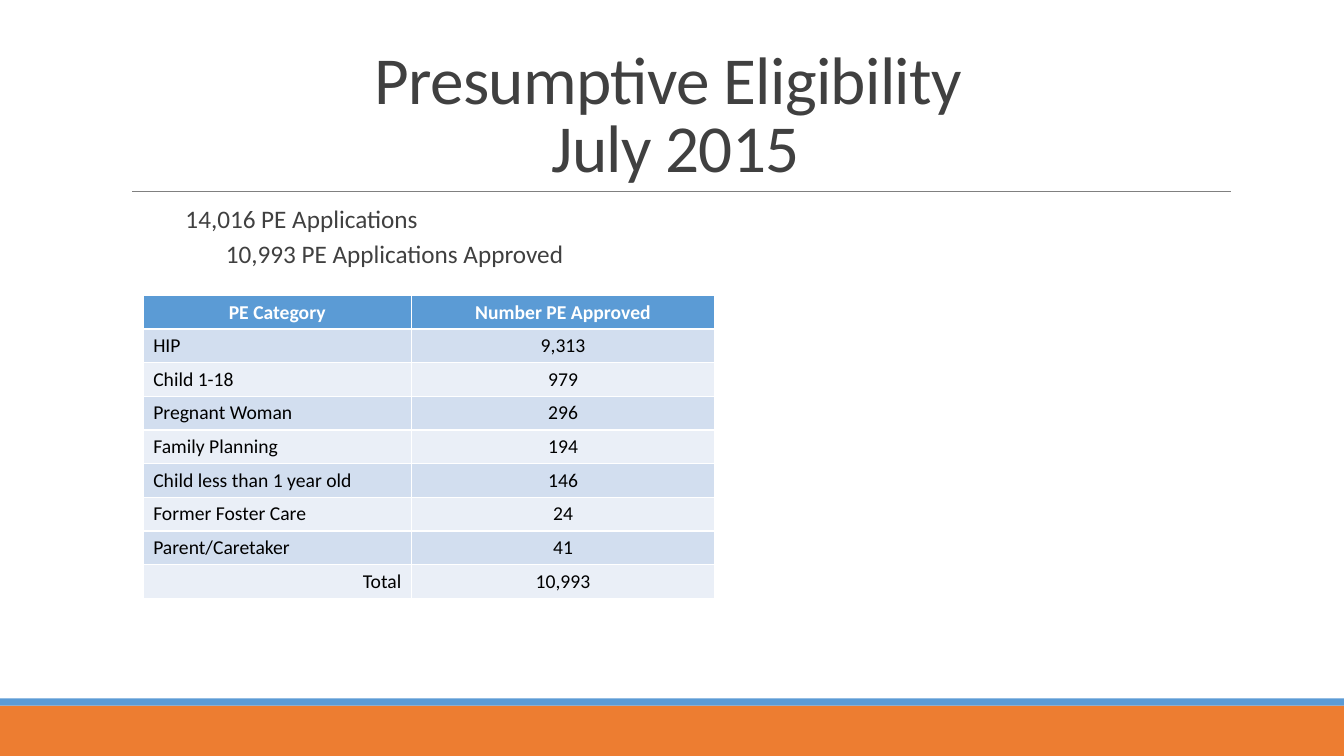
from dataclasses import dataclass

from lxml import etree
from pptx import Presentation
from pptx import util as u
from pptx.dml.color import RGBColor
from pptx.enum import shapes, text
from pptx.oxml import ns

COLORS = {
    "orange": "ED7D31",
    "blue": "5B9BD5",
    "rule": "808080",
    "body": "404040",
    "white": "FFFFFF",
    "black": "000000",
    "band_dark": "D2DEEF",
    "band_light": "EAEFF7",
}
FONT = "Calibri"
SLIDE_WIDTH, SLIDE_HEIGHT = 13.33, 7.5
ALIGN = text.PP_ALIGN


@dataclass
class Bar:
    top: float
    height: float
    color: str


@dataclass
class Statement:
    wording: str
    indent: float


@dataclass
class Category:
    name: str
    approved: str
    align: ALIGN = ALIGN.LEFT


BARS = [Bar(7, 0.5, "orange"), Bar(6.93, 0.07, "blue")]
TITLE_LINES = ["Presumptive Eligibility ", "July 2015"]
STATEMENTS = [
    Statement("14,016 PE Applications", 0.42),
    Statement("10,993 PE Applications Approved", 0.82),
]
CATEGORIES = [
    Category("PE Category", "Number PE Approved", ALIGN.CENTER),
    Category("HIP", "9,313"),
    Category("Child 1-18", "979"),
    Category("Pregnant Woman", "296"),
    Category("Family Planning", "194"),
    Category("Child less than 1 year old", "146"),
    Category("Former Foster Care", "24"),
    Category("Parent/Caretaker", "41"),
    Category("Total", "10,993", ALIGN.RIGHT),
]
COLUMN_WIDTHS = [2.66, 3.01]
ROW_HEIGHT = 0.33


def rgb(name: str) -> RGBColor:
    return RGBColor.from_string(COLORS[name])


def style(para, size: float, color: str, bold: bool = False) -> None:
    font = para.font
    font.name, font.size, font.bold = FONT, u.Pt(size), bold
    font.color.rgb = rgb(color)


def place(box, left: float, top: float, width: float, height: float) -> None:
    box.left, box.top = u.Inches(left), u.Inches(top)
    box.width, box.height = u.Inches(width), u.Inches(height)


def draw_bar(page, bar: Bar) -> None:
    box = page.shapes.add_shape(
        shapes.MSO_SHAPE.RECTANGLE, 0, u.Inches(bar.top),
        u.Inches(SLIDE_WIDTH), u.Inches(bar.height))
    box.shadow.inherit = False
    box.fill.solid()
    box.fill.fore_color.rgb = rgb(bar.color)
    box.line.fill.background()


def draw_rule(page) -> None:
    rule = page.shapes.add_connector(
        shapes.MSO_CONNECTOR.STRAIGHT, u.Inches(1.31), u.Inches(1.9),
        u.Inches(12.21), u.Inches(1.9))
    rule.line.color.rgb = rgb("rule")
    rule.line.width = u.Pt(0.5)
    etree.SubElement(rule._element.spPr, ns.qn("a:effectLst"))


def draw_title(page) -> None:
    title = page.shapes.title
    place(title, 1.2, 0.31, 11, 1.59)
    frame = title.text_frame
    frame.auto_size = text.MSO_AUTO_SIZE.NONE
    frame.vertical_anchor = text.MSO_ANCHOR.BOTTOM
    para = frame.paragraphs[0]
    para.alignment = ALIGN.CENTER
    para.line_spacing = 0.85
    style(para, 48, "body")
    for index, line in enumerate(TITLE_LINES):
        if index:
            para.add_line_break()
        span = para.add_run()
        span.text = line
        span.font._element.set("spc", "-50")


def draw_statements(page, statements: list[Statement]) -> None:
    box = page.shapes.add_textbox(0, 0, 0, 0)
    place(box, 1.42, 2, 11, 0.85)
    frame = box.text_frame
    frame.word_wrap = True
    frame.margin_left = frame.margin_right = 0
    for index, statement in enumerate(statements):
        para = frame.add_paragraph() if index else frame.paragraphs[0]
        para.text = statement.wording
        para.line_spacing = 0.9
        para.space_before, para.space_after = u.Pt(2), u.Pt(4)
        para._p.get_or_add_pPr().set("marL", str(u.Inches(statement.indent)))
        style(para, 18, "body")


def draw_table(page, categories: list[Category]) -> None:
    table = page.shapes.add_table(
        len(categories), len(COLUMN_WIDTHS), u.Inches(1.42), u.Inches(2.93),
        u.Inches(sum(COLUMN_WIDTHS)),
        u.Inches(ROW_HEIGHT * len(categories))).table
    for column, width in zip(table.columns, COLUMN_WIDTHS):
        column.width = u.Inches(width)
    for index, category in enumerate(categories):
        header = index == 0
        band = "band_dark" if index % 2 else "band_light"
        table.rows[index].height = u.Inches(ROW_HEIGHT)
        entries = [(category.name, category.align),
                   (category.approved, ALIGN.CENTER)]
        for cell, (wording, align) in zip(table.rows[index].cells, entries):
            cell.fill.solid()
            cell.fill.fore_color.rgb = rgb("blue" if header else band)
            para = cell.text_frame.paragraphs[0]
            para.text = wording
            para.alignment = align
            style(para, 14, "white" if header else "black", header)


def main() -> None:
    deck = Presentation()
    deck.slide_width = u.Inches(SLIDE_WIDTH)
    deck.slide_height = u.Inches(SLIDE_HEIGHT)
    page = deck.slides.add_slide(deck.slide_layouts.get_by_name("Title Only"))
    for bar in BARS:
        draw_bar(page, bar)
    draw_rule(page)
    draw_title(page)
    draw_statements(page, STATEMENTS)
    draw_table(page, CATEGORIES)
    deck.save("out.pptx")


if __name__ == "__main__":
    main()
